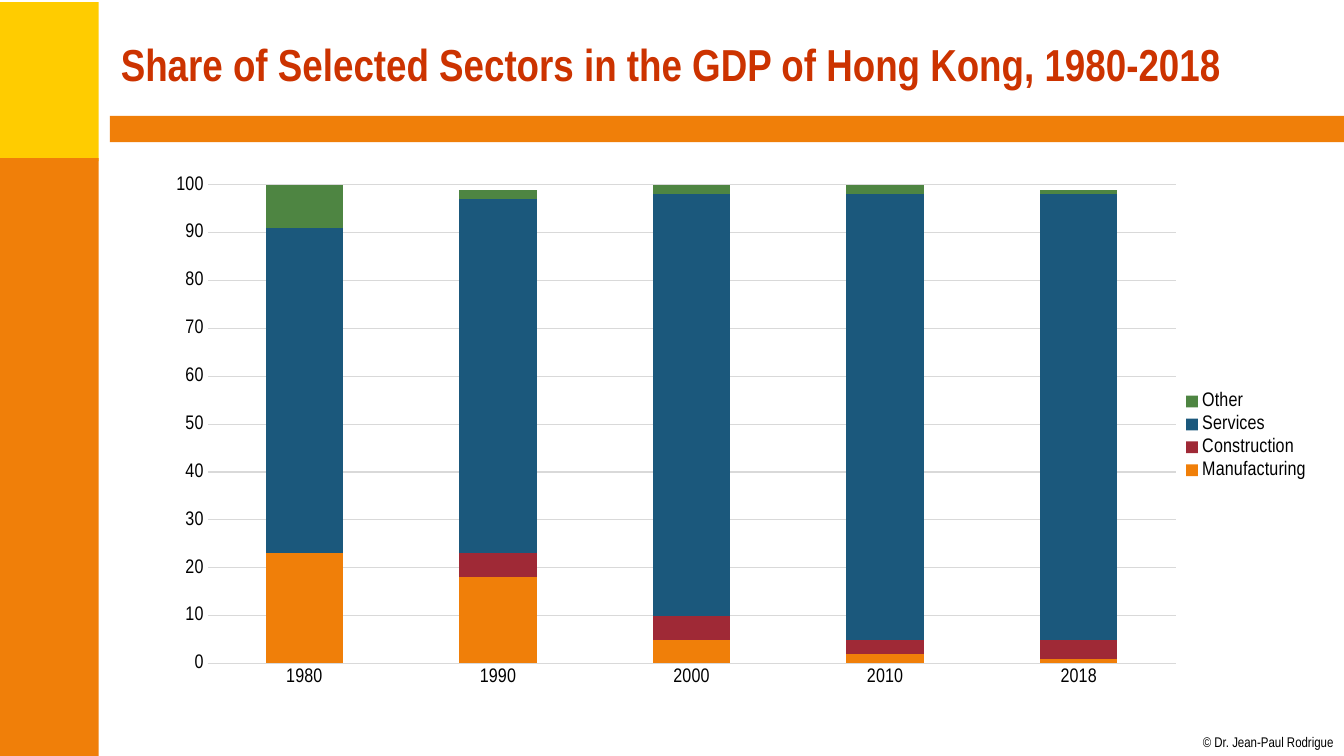
from dataclasses import dataclass

from lxml import etree
from pptx import Presentation
from pptx.chart.data import CategoryChartData
from pptx.dml.color import RGBColor
from pptx.enum.chart import XL_CHART_TYPE as ChartType
from pptx.enum.chart import XL_LEGEND_POSITION as LegendSide
from pptx.enum.chart import XL_TICK_MARK as TickMark
from pptx.enum.shapes import MSO_SHAPE as Preset
from pptx.enum.text import MSO_ANCHOR as Anchor
from pptx.oxml.ns import qn
from pptx.util import Inches, Pt


@dataclass(frozen=True)
class Theme:
    font: str = "Arial Narrow"
    ink: str = "000000"
    title: str = "CC3300"
    yellow: str = "FFCC00"
    orange: str = "F07F09"
    red: str = "9F2936"
    blue: str = "1B587C"
    green: str = "4E8542"
    grid: str = "D9D9D9"
    title_size: int = 32
    chart_size: int = 14
    credit_size: int = 10


class SlideBuilder:
    def __init__(self, slide, theme):
        self.shapes = slide.shapes
        self.theme = theme

    def style_font(self, font, size, color, bold=False):
        font.name = self.theme.font
        font.size = Pt(size)
        font.bold = bold
        font.color.rgb = RGBColor.from_string(color)

    def style_line(self, line):
        line.color.rgb = RGBColor.from_string(self.theme.grid)
        line.width = Pt(0.75)

    def band(self, left, top, width, height, color):
        band = self.shapes.add_shape(
            Preset.RECTANGLE, Inches(left), Inches(top), Inches(width), Inches(height))
        band.shadow.inherit = False
        band.fill.solid()
        band.fill.fore_color.rgb = RGBColor.from_string(color)
        band.line.fill.background()

    def text(self, left, top, width, height, words, size, color,
             bold=False, wrap=True, margins=(0.1, 0.05), anchor=Anchor.TOP):
        frame = self.shapes.add_textbox(
            Inches(left), Inches(top), Inches(width), Inches(height)).text_frame
        frame.word_wrap = wrap
        frame.vertical_anchor = anchor
        frame.margin_left = frame.margin_right = Inches(margins[0])
        frame.margin_top = frame.margin_bottom = Inches(margins[1])
        run = frame.paragraphs[0].add_run()
        run.text = words
        self.style_font(run.font, size, color, bold)

    def stacked_columns(self, left, top, width, height, years, sectors, plot_box):
        data = CategoryChartData()
        data.categories = years
        for name, shares, _ in sectors:
            data.add_series(name, shares)
        chart = self.shapes.add_chart(
            ChartType.COLUMN_STACKED, Inches(left), Inches(top),
            Inches(width), Inches(height), data).chart
        chart.has_title = False
        size, ink = self.theme.chart_size, self.theme.ink
        self.style_font(chart.font, size, ink)

        # Columns
        plot = chart.plots[0]
        plot.vary_by_categories = False
        plot.gap_width = 150
        plot.overlap = 100
        for series, (_, _, color) in zip(plot.series, sectors):
            series.format.fill.solid()
            series.format.fill.fore_color.rgb = RGBColor.from_string(color)

        # Axes
        for axis in (chart.category_axis, chart.value_axis):
            axis.major_tick_mark = axis.minor_tick_mark = TickMark.NONE
            self.style_font(axis.tick_labels.font, size, ink)
        self.style_line(chart.category_axis.format.line)
        share_axis = chart.value_axis
        share_axis.minimum_scale = 0
        share_axis.maximum_scale = 100
        share_axis.major_unit = 10
        share_axis.format.line.fill.background()
        self.style_line(share_axis.major_gridlines.format.line)

        # Legend
        chart.has_legend = True
        chart.legend.position = LegendSide.RIGHT
        chart.legend.include_in_layout = False
        self.style_font(chart.legend.font, size, ink)
        self.place_plot(chart, plot_box)

    def place_plot(self, chart, plot_box):
        area = chart.element.find(".//" + qn("c:plotArea"))
        layout = area.find(qn("c:layout"))
        if layout is None:
            layout = etree.Element(qn("c:layout"))
            area.insert(0, layout)
        manual = etree.SubElement(layout, qn("c:manualLayout"))
        settings = [("layoutTarget", "inner"), ("xMode", "edge"), ("yMode", "edge")]
        settings += zip("xywh", plot_box)
        for tag, value in settings:
            etree.SubElement(manual, qn(f"c:{tag}")).set("val", str(value))


def main():
    theme = Theme()
    deck = Presentation()
    deck.slide_width, deck.slide_height = Inches(13.33), Inches(7.5)
    page = SlideBuilder(deck.slides.add_slide(deck.slide_layouts[6]), theme)

    # Side and title bands
    page.band(-0.02, 0.02, 1, 1.58, theme.yellow)
    page.band(-0.02, 1.57, 1, 5.93, theme.orange)
    page.band(1.09, 1.15, 12.24, 0.26, theme.orange)

    # Credit and title
    page.text(11.93, 7.28, 1.31, 0.17, "© Dr. Jean-Paul Rodrigue",
              theme.credit_size, theme.ink, wrap=False, margins=(0, 0))
    page.text(1.1, 0.11, 12, 1.04,
              "Share of Selected Sectors in the GDP of Hong Kong, 1980-2018",
              theme.title_size, theme.title, bold=True, anchor=Anchor.MIDDLE)

    # Sector shares in percent
    years = ["1980", "1990", "2000", "2010", "2018"]
    sectors = [
        ("Manufacturing", (23, 18, 5, 2, 1), theme.orange),
        ("Construction", (None, 5, 5, 3, 4), theme.red),
        ("Services", (68, 74, 88, 93, 93), theme.blue),
        ("Other", (9, 2, 2, 2, 1), theme.green),
    ]
    page.stacked_columns(1.1, 1.43, 12, 5.79, years, sectors,
                         plot_box=(0.08, 0.07, 0.8, 0.82))

    deck.save("out.pptx")


if __name__ == "__main__":
    main()
